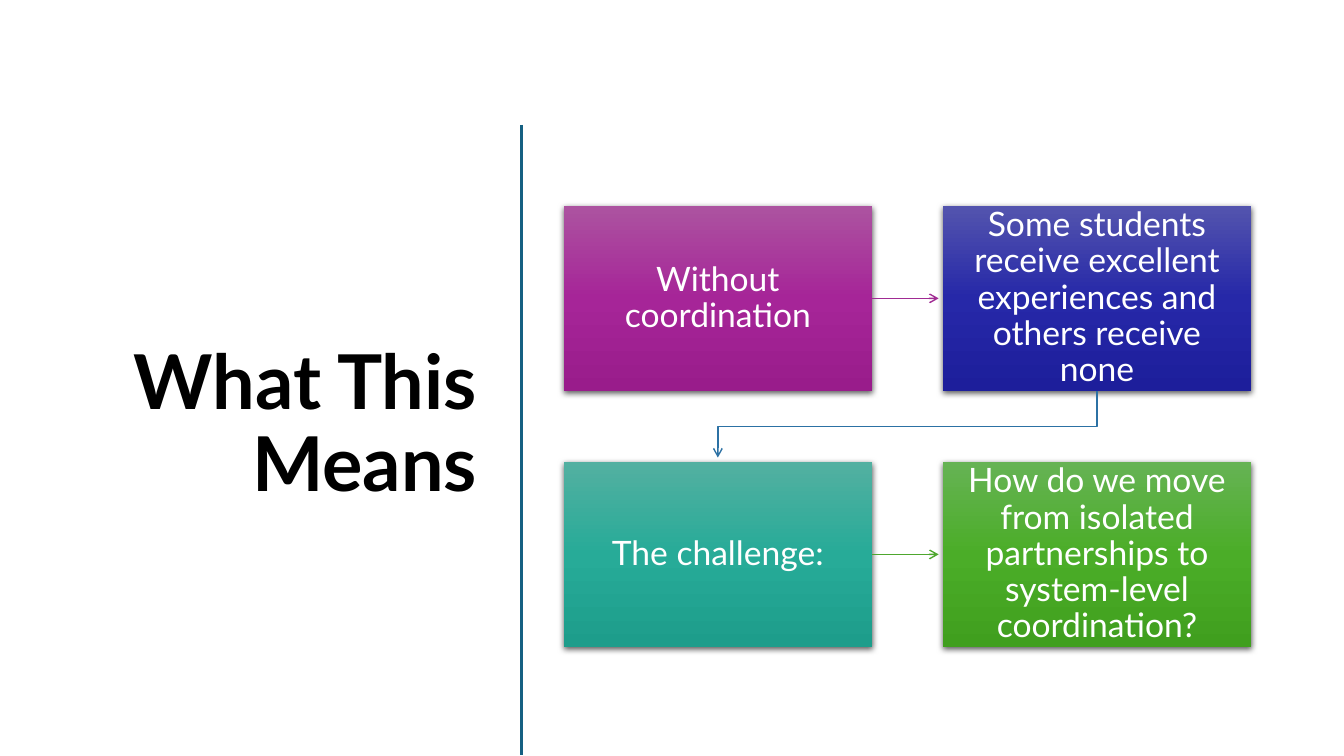
from copy import deepcopy

from lxml.etree import SubElement
from pptx import Presentation
from pptx.dml.color import RGBColor
from pptx.enum.shapes import MSO_CONNECTOR, MSO_SHAPE
from pptx.enum.text import MSO_ANCHOR, PP_ALIGN
from pptx.oxml.ns import qn
from pptx.util import Inches, Pt

BLACK = RGBColor(0x00, 0x00, 0x00)
WHITE = RGBColor(0xFF, 0xFF, 0xFF)
DIVIDER = RGBColor(0x15, 0x60, 0x82)
PURPLE_LINE = RGBColor(0xA0, 0x2B, 0x93)
BLUE_LINE = RGBColor(0x2C, 0x71, 0xA4)
GREEN_LINE = RGBColor(0x4E, 0xA7, 0x2E)
# Gradient colours from top to bottom
PURPLE = [RGBColor(0xAC, 0x53, 0xA0), RGBColor(0xA6, 0x25, 0x98), RGBColor(0x99, 0x1C, 0x8B)]
INDIGO = [RGBColor(0x53, 0x54, 0xAE), RGBColor(0x26, 0x28, 0xA8), RGBColor(0x1D, 0x1E, 0x9B)]
TEAL = [RGBColor(0x53, 0xB0, 0xA1), RGBColor(0x27, 0xAB, 0x98), RGBColor(0x1D, 0x9D, 0x8B)]
GREEN = [RGBColor(0x66, 0xB3, 0x54), RGBColor(0x4B, 0xAD, 0x28), RGBColor(0x40, 0x9F, 0x1E)]

STEPS = [
    ("Without coordination", PURPLE),
    ("Some students receive excellent experiences and others receive none", INDIGO),
    ("The challenge:", TEAL),
    ("How do we move from isolated partnerships to system-level coordination?", GREEN),
]


def write_text(shape, text, size, color, align, bold=False, inset=(0.1, 0.05)):
    frame = shape.text_frame
    frame.word_wrap = True
    frame.vertical_anchor = MSO_ANCHOR.MIDDLE
    frame.margin_left = frame.margin_right = Inches(inset[0])
    frame.margin_top = frame.margin_bottom = Inches(inset[1])
    paragraph = frame.paragraphs[0]
    paragraph.alignment = align
    paragraph.line_spacing = 0.9
    run = paragraph.add_run()
    run.text = text
    run.font.name = "Lato"
    run.font.size = Pt(size)
    run.font.bold = bold
    run.font.color.rgb = color


def style_line(shape, color, width, arrow=False):
    shape.line.color.rgb = color
    shape.line.width = Pt(width)
    if arrow:
        SubElement(shape.line._get_or_add_ln(), qn("a:tailEnd"), type="arrow")


def add_line(slide, start, end, color, width, arrow=False):
    points = [Inches(value) for value in (*start, *end)]
    line = slide.shapes.add_connector(MSO_CONNECTOR.STRAIGHT, *points)
    style_line(line, color, width, arrow)
    SubElement(line._element.spPr, qn("a:effectLst"))
    return line


def fill_gradient(shape, colors):
    shape.fill.gradient()
    shape.fill.gradient_angle = 270
    stop_list = shape._element.spPr.find(qn("a:gradFill")).find(qn("a:gsLst"))
    stop_list.insert(1, deepcopy(stop_list[0]))
    for stop, color, position in zip(shape.fill.gradient_stops, colors, (0, 0.5, 1)):
        stop.color.rgb = color
        stop.color.brightness = 0
        stop.position = position


def add_soft_shadow(shape):
    shape.shadow.inherit = False
    effects = shape._element.spPr.find(qn("a:effectLst"))
    shadow = SubElement(effects, qn("a:outerShdw"), blurRad=str(Pt(4.5)),
                        dist=str(Pt(1.5)), dir="5400000", algn="ctr", rotWithShape="0")
    black = SubElement(shadow, qn("a:srgbClr"), val=str(BLACK))
    SubElement(black, qn("a:alpha"), val="63000")


def add_step(slide, left, top, width, height, text, colors):
    box = slide.shapes.add_shape(MSO_SHAPE.RECTANGLE, Inches(left), Inches(top),
                                 Inches(width), Inches(height))
    fill_gradient(box, colors)
    box.line.fill.background()
    add_soft_shadow(box)
    write_text(box, text, 24, WHITE, PP_ALIGN.CENTER, inset=(0.15, 0.16))
    return box


def add_title(slide, left, top, width, height):
    title = slide.shapes.add_textbox(Inches(left), Inches(top), Inches(width), Inches(height))
    write_text(title, "What This Means", 54, BLACK, PP_ALIGN.RIGHT, bold=True)


def add_flow(slide, left, top, width, height):
    box_width, box_height, tip_gap = 3.06, 1.84, 0.04
    column_step, row_step = width - box_width, height - box_height

    # Two by two grid of steps
    boxes = []
    for index, (text, colors) in enumerate(STEPS):
        row, column = divmod(index, 2)
        boxes.append(add_step(slide, left + column * column_step, top + row * row_step,
                              box_width, box_height, text, colors))

    # Arrow across each row
    for row, color in enumerate((PURPLE_LINE, GREEN_LINE)):
        middle = top + row * row_step + box_height / 2
        arrow = add_line(slide, (left + box_width, middle),
                         (left + column_step - tip_gap, middle), color, 1, arrow=True)
        arrow.begin_connect(boxes[2 * row], 3)

    # Bent arrow from the first row to the second
    target = left + box_width / 2
    source = target + column_step
    bottom = top + box_height
    bend = (bottom + top + row_step) / 2
    builder = slide.shapes.build_freeform(Inches(source), Inches(bottom))
    corners = [(source, bend), (target, bend), (target, top + row_step - tip_gap)]
    builder.add_line_segments([(Inches(x), Inches(y)) for x, y in corners], close=False)
    bent_arrow = builder.convert_to_shape()
    bent_arrow.fill.background()
    bent_arrow.shadow.inherit = False
    style_line(bent_arrow, BLUE_LINE, 1, arrow=True)


def main():
    presentation = Presentation()
    presentation.slide_width = Inches(13.33)
    presentation.slide_height = Inches(7.5)
    slide = presentation.slides.add_slide(presentation.slide_layouts[6])
    add_title(slide, 0.52, 1.17, 4.31, 6.11)
    add_line(slide, (5.17, 1.24), (5.17, 7.49), DIVIDER, 2)
    add_flow(slide, 5.59, 2.04, 6.82, 4.38)
    presentation.save("out.pptx")


if __name__ == "__main__":
    main()
